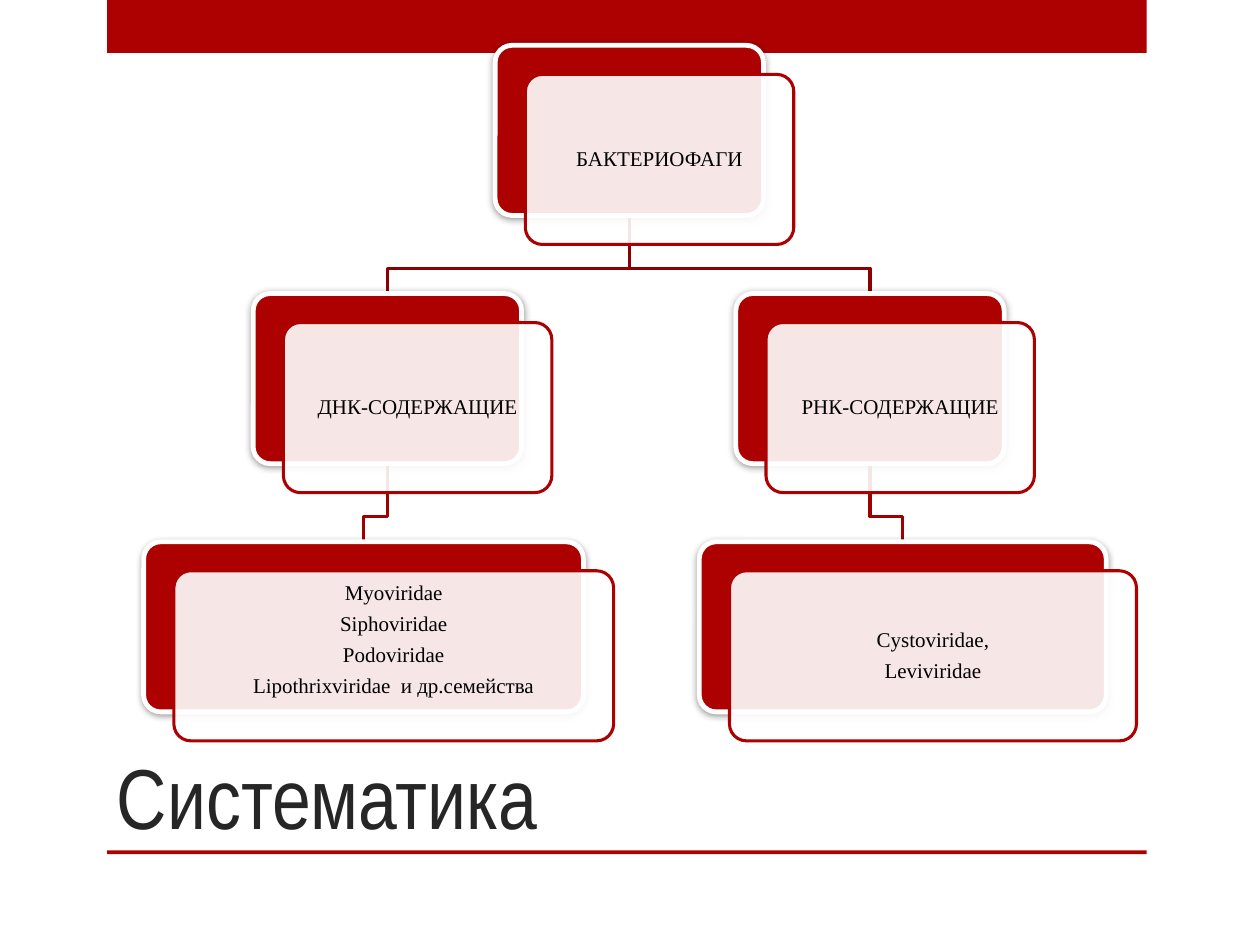
from lxml import etree
from pptx import Presentation, util as u
from pptx.dml.color import RGBColor
from pptx.enum import shapes, text
from pptx.oxml.ns import qn

Inches, Pt = u.Inches, u.Pt
RED, WHITE = "AD0101", "FFFFFF"
CARD_HEIGHT = 1.35
OFFSET_X, OFFSET_Y = 0.24, 0.23
INSET = 0.09


def color(hex_string):
    return RGBColor.from_string(hex_string)


def add_block(kind, left, top, width, height, fill, line=None, weight=0):
    block = page.shapes.add_shape(
        kind, Inches(left), Inches(top), Inches(width), Inches(height))
    block.shadow.inherit = False
    block.fill.solid()
    block.fill.fore_color.rgb = color(fill)
    if line:
        block.adjustments[0] = 0.1
        block.line.color.rgb = color(line)
        block.line.width = Pt(weight)
    else:
        block.line.fill.background()
    return block


deck = Presentation()
deck.slide_width, deck.slide_height = Inches(10), Inches(7.5)
page = deck.slides.add_slide(deck.slide_layouts[6])

# Red bands and title
for top, height in ((0, 0.42), (6.75, 0.03)):
    add_block(shapes.MSO_SHAPE.RECTANGLE, 0.85, top, 8.25, height, RED)

title = page.shapes.add_textbox(Inches(0.83), Inches(6.03), Inches(7.42), Inches(0.72))
frame = title.text_frame
frame.word_wrap = True
frame.vertical_anchor = text.MSO_ANCHOR.BOTTOM
frame.margin_bottom = Inches(0.03)
span = frame.paragraphs[0].add_run()
span.text = "Систематика"
for name, value in {"name": "Arial Narrow", "size": Pt(48.6)}.items():
    setattr(span.font, name, value)
span.font.color.rgb = color("262626")

# Card: left, top, width, lines of text, extra bottom inset
cards = {
    "phages": (3.93, 0.36, 2.13, ["БАКТЕРИОФАГИ"], 0),
    "dna": (2.01, 2.33, 2.13, ["ДНК-СОДЕРЖАЩИЕ"], 0),
    "dna families": (1.14, 4.3, 3.49, [
        "Myoviridae", "Siphoviridae", "Podoviridae",
        "Lipothrixviridae  и др.семейства"], 0.25),
    "rna": (5.84, 2.33, 2.13, ["РНК-СОДЕРЖАЩИЕ"], 0),
    "rna families": (5.55, 4.3, 3.23, ["Cystoviridae,", "Leviviridae"], 0),
}

# Elbow lines from the bottom of a parent to the top of a child
links = [
    ("rna", "rna families", "9D0101"),
    ("phages", "rna", "8B0101"),
    ("dna", "dna families", "9D0101"),
    ("phages", "dna", "8B0101"),
]
for parent, child, shade in links:
    start_x, end_x = (cards[key][0] + cards[key][2] / 2 for key in (parent, child))
    start_y, end_y = cards[parent][1] + CARD_HEIGHT, cards[child][1]
    bend_y = end_y - 0.2
    builder = page.shapes.build_freeform(Inches(start_x), Inches(start_y))
    corners = [(start_x, bend_y), (end_x, bend_y), (end_x, end_y)]
    builder.add_line_segments(
        [(Inches(x), Inches(y)) for x, y in corners], close=False)
    elbow = builder.convert_to_shape()
    elbow.shadow.inherit = False
    elbow.fill.background()
    elbow.line.color.rgb = color(shade)
    elbow.line.width = Pt(1.75)

# Each card is a red back with a translucent text panel in front
for left, top, width, lines, extra in cards.values():
    back = add_block(shapes.MSO_SHAPE.ROUNDED_RECTANGLE, left, top,
                     width, CARD_HEIGHT, RED, WHITE, 2.75)
    effects = back._element.spPr.find(qn("a:effectLst"))
    shadow = etree.SubElement(
        effects, qn("a:outerShdw"), blurRad=str(Pt(4)), dist=str(Pt(1)),
        dir=str(88 * 60000), rotWithShape="0")
    tint = etree.SubElement(shadow, qn("a:srgbClr"), val="000000")
    etree.SubElement(tint, qn("a:alpha"), val="40000")

    panel = add_block(shapes.MSO_SHAPE.ROUNDED_RECTANGLE, left + OFFSET_X,
                      top + OFFSET_Y, width, CARD_HEIGHT, WHITE, RED, 1.75)
    fill_color = panel._element.spPr.find(qn("a:solidFill")).find(qn("a:srgbClr"))
    etree.SubElement(fill_color, qn("a:alpha"), val="90000")

    frame = panel.text_frame
    frame.word_wrap = True
    frame.vertical_anchor = text.MSO_ANCHOR.MIDDLE
    for side in ("left", "top", "right", "bottom"):
        setattr(frame, f"margin_{side}", Inches(INSET))
    frame.margin_bottom = Inches(INSET + extra)
    for index, line in enumerate(lines):
        para = frame.add_paragraph() if index else frame.paragraphs[0]
        para_format = {"alignment": text.PP_ALIGN.CENTER,
                       "line_spacing": 0.9, "space_after": Pt(4.7)}
        for name, value in para_format.items():
            setattr(para, name, value)
        span = para.add_run()
        span.text = line
        for name, value in {"name": "Times New Roman", "size": Pt(12)}.items():
            setattr(span.font, name, value)
        span.font.color.rgb = color("000000")

deck.save("out.pptx")
